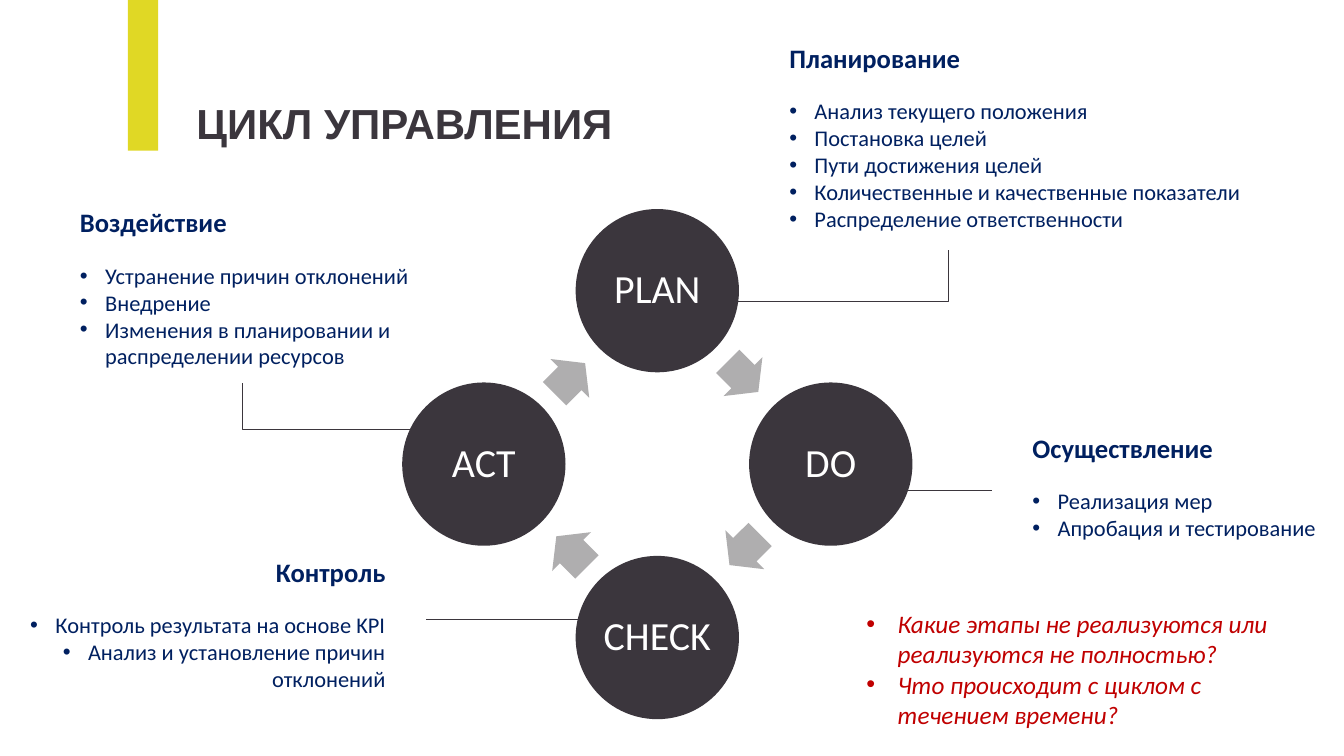
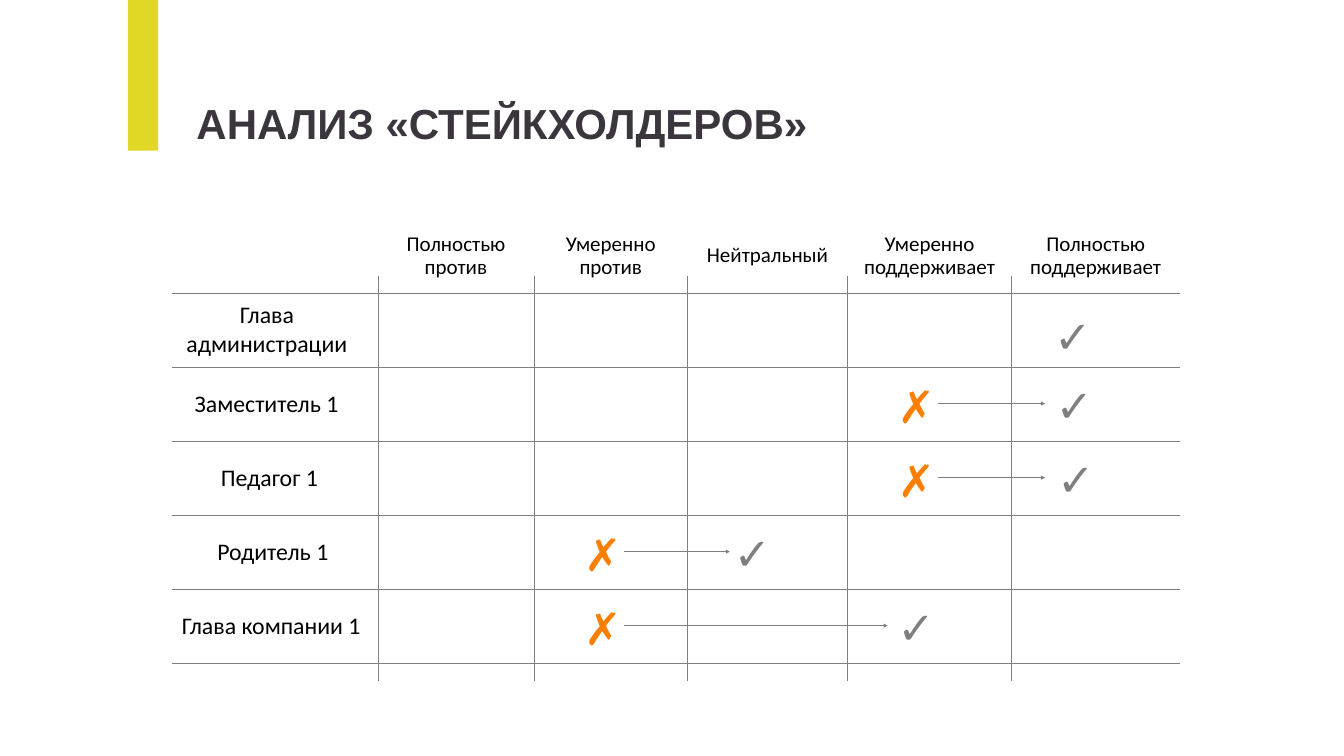
from dataclasses import dataclass
from itertools import pairwise
from math import cos, radians, sin

from lxml import etree
from pptx import Presentation
from pptx.dml.color import RGBColor
from pptx.enum.shapes import MSO_CONNECTOR, MSO_SHAPE
from pptx.enum.text import MSO_ANCHOR, MSO_AUTO_SIZE, PP_ALIGN
from pptx.oxml.ns import qn
from pptx.util import Cm, Pt

LEFT, MID, RIGHT = PP_ALIGN.LEFT, PP_ALIGN.CENTER, PP_ALIGN.RIGHT
TOP, CENTER = MSO_ANCHOR.TOP, MSO_ANCHOR.MIDDLE
GROW, FIXED = MSO_AUTO_SIZE.SHAPE_TO_FIT_TEXT, MSO_AUTO_SIZE.NONE
RECT, OVAL, ARROW = MSO_SHAPE.RECTANGLE, MSO_SHAPE.OVAL, MSO_SHAPE.RIGHT_ARROW
STRAIGHT, ELBOW = MSO_CONNECTOR.STRAIGHT, MSO_CONNECTOR.ELBOW


@dataclass(frozen=True)
class Theme:
    dark: str = "3B363D"
    lime: str = "E0D825"
    navy: str = "002060"
    red: str = "C00000"
    silver: str = "AFAEAF"
    gray: str = "7F7F7F"
    orange: str = "FE7F00"
    white: str = "FFFFFF"
    black: str = "000000"
    head: str = "Arial"
    body: str = "Calibri"
    title: int = 60
    stage: int = 57
    topic: int = 38
    item: int = 32
    ask: int = 36
    column: int = 30
    row: int = 34
    mark: int = 64


T = Theme()

# Cycle slide: box is left, top, width, height in cm
CYCLE = "ЦИКЛ УПРАВЛЕНИЯ"
STAGES = ["PLAN", "DO", "CHECK", "ACT"]
TOPICS = [
    ("Планирование", (39.52, 1.98, 24.49, 9.91), LEFT,
     ["Анализ текущего положения", "Постановка целей",
      "Пути достижения целей",
      "Количественные и качественные показатели",
      "Распределение ответственности"]),
    ("Осуществление", (51.77, 21.62, 15.9, 5.82), LEFT,
     ["Реализация мер", "Апробация и тестирование"]),
    ("Контроль", (0.53, 27.86, 19.15, 7.19), RIGHT,
     ["Контроль результата на основе KPI",
      "Анализ и установление причин отклонений"]),
    ("Воздействие", (3.78, 10.26, 19.33, 8.56), LEFT,
     ["Устранение причин отклонений", "Внедрение",
      "Изменения в планировании и распределении ресурсов"]),
]
ASKS = ["Какие этапы не реализуются или реализуются не полностью?",
        "Что происходит с циклом с течением времени?"]
ASK_BOX = (43.41, 30.53, 21.29, 6.4)
LINKS = [
    (ELBOW, (22.07, 21.62), (12.19, 19.28)),
    (ELBOW, (37.06, 15.16), (47.8, 12.62)),
    (STRAIGHT, (44.55, 24.69), (49.96, 24.69)),
    (STRAIGHT, (29.69, 31.19), (21.49, 31.19)),
]
HUB, ORBIT, DISC = (33.12, 23.39), 8.74, 8.23
TURN, ARROW_W, ARROW_H = 6.17, 2.18, 2.77

# Stakeholder slide
PEOPLE = "АНАЛИЗ «СТЕЙКХОЛДЕРОВ»"
COLUMNS = [("Полностью против", 6.07), ("Умеренно против", 5.89),
           ("Нейтральный", 7.11), ("Умеренно поддерживает", 8.36),
           ("Полностью поддерживает", 8.03)]
ROWS = [("Глава администрации", 7.8, 11.3, 2.87, MID),
        ("Заместитель 1", 9.3, 9.42, 2.62, LEFT),
        ("Педагог 1", 10.62, 8.23, 1.98, LEFT),
        ("Родитель 1", 10.44, 7.11, 2.26, LEFT),
        ("Глава компании 1", 8.66, 11.99, 2.03, LEFT)]
# row, column now, column wanted, left of tick and arrow tip in its column
MOVES = [(1, 3, 4, 1.7, 1.68), (2, 3, 4, 1.78, 1.68),
         (3, 1, 2, 1.8, 2.13), (4, 1, 3, 2.01, 2.03)]
EDGES = [19.05, 26.9, 34.65, 42.7, 50.98]
GRID_L, GRID_R, GRID_T, STEP = 8.66, 59.44, 14.76, 3.73
POST_T, POST_B = 13.92, 34.34


def rgb(code):
    return RGBColor.from_string(code)


def place(shape, box):
    shape.left, shape.top, shape.width, shape.height = map(Cm, box)
    return shape


def setup(frame, anchor=TOP, fit=FIXED, wrap=True, pad=(0.25, 0.13)):
    frame.word_wrap, frame.auto_size = wrap, fit
    frame.vertical_anchor = anchor
    frame.margin_left = frame.margin_right = Cm(pad[0])
    frame.margin_top = frame.margin_bottom = Cm(pad[1])
    return frame


def write(frame, text, size, color, align=LEFT, font=T.body, bold=False,
          italic=False, space=1.0, after=0, hang=0):
    """Add a paragraph of one run; hang is the bullet indent in cm."""
    para = frame.paragraphs[0]
    if para.runs:
        para = frame.add_paragraph()
    para.alignment, para.line_spacing = align, space
    para.space_before, para.space_after = Pt(0), Pt(after)
    props = para._p.get_or_add_pPr()
    props.set("marL", str(Cm(hang)))
    props.set("indent", str(-Cm(hang)))
    if hang:
        etree.SubElement(props, qn("a:buFont"), typeface="Arial")
        etree.SubElement(props, qn("a:buChar"), char="•")
    else:
        etree.SubElement(props, qn("a:buNone"))
    run = para.add_run()
    run.text = text
    run.font.name, run.font.size = font, Pt(size)
    run.font.bold, run.font.italic = bold, italic
    run.font.color.rgb = rgb(color)


def label(slide, box, text, size, color, pad=(0.51, 0.25), **style):
    shape = slide.shapes.add_textbox(*map(Cm, box))
    write(setup(shape.text_frame, pad=pad), text, size, color, **style)


def solid(slide, kind, box, color):
    shape = slide.shapes.add_shape(kind, *map(Cm, box))
    shape.shadow.inherit = False
    shape.fill.solid()
    shape.fill.fore_color.rgb = rgb(color)
    shape.line.fill.background()
    return shape


def rule(slide, start, end, color, width, kind=STRAIGHT, tip=False):
    line = slide.shapes.add_connector(kind, *map(Cm, (*start, *end)))
    line.line.color.rgb = rgb(color)
    line.line.width = Pt(width)
    props = line._element.spPr
    if tip:
        etree.SubElement(props.find(qn("a:ln")), qn("a:tailEnd"),
                         type="triangle")
    if kind == ELBOW:  # put the corner under the end point
        guides = props.find(qn("a:prstGeom")).find(qn("a:avLst"))
        etree.SubElement(guides, qn("a:gd"), name="adj1", fmla="val 100000")
    etree.SubElement(props, qn("a:effectLst"))


def start(deck, layout, title, width):
    """Add a slide with the shared title and accent band."""
    slide = deck.slides.add_slide(deck.slide_layouts.get_by_name(layout))
    head = place(slide.shapes.title, (9.65, 4.78, width, 2.82))
    write(setup(head.text_frame, fit=GROW, wrap=False), title, T.title,
          T.dark, font=T.head, bold=True)
    solid(slide, RECT, (6.45, 0, 1.52, 7.59), T.lime)
    return slide


def spot(dist, angle, wide, high):
    """Box centred on a circle round the hub."""
    turn = radians(angle)
    return (HUB[0] + dist * cos(turn) - wide / 2,
            HUB[1] + dist * sin(turn) - high / 2, wide, high)


def cycle(deck):
    slide = start(deck, "Comparison", CYCLE, 21.69)
    for i, name in enumerate(STAGES):
        disc = solid(slide, OVAL, spot(ORBIT, 90 * i - 90, DISC, DISC), T.dark)
        frame = setup(disc.text_frame, CENTER, wrap=False, pad=(0.2, 0.2))
        write(frame, name, T.stage, T.white, MID, space=0.9)
        arrow = solid(slide, ARROW,
                      spot(TURN, 90 * i - 45.6, ARROW_W, ARROW_H), T.silver)
        arrow.adjustments[0], arrow.adjustments[1] = 0.6, 0.5
        arrow.rotation = 45 + 90 * i
    for kind, begin, end in LINKS:
        rule(slide, begin, end, T.dark, 0.5, kind)
    bodies = [p for p in slide.placeholders
              if 1 <= p.placeholder_format.idx <= 4]
    for body, (topic, box, align, items) in zip(bodies, TOPICS):
        frame = setup(place(body, box).text_frame, fit=GROW)
        write(frame, topic, T.topic, T.navy, align, bold=True, after=34)
        for item in items:
            write(frame, item, T.item, T.navy, align, hang=1.27)
    box = slide.shapes.add_textbox(*map(Cm, ASK_BOX))
    frame = setup(box.text_frame, fit=GROW)
    for ask in ASKS:
        write(frame, ask, T.ask, T.red, italic=True, hang=1.57)


def people(deck):
    slide = start(deck, "Title Only", PEOPLE, 31.45)
    tops = [GRID_T + STEP * i for i in range(len(ROWS) + 1)]
    for y in tops:
        rule(slide, (GRID_L, y), (GRID_R, y), T.gray, 1)
    for x in EDGES:
        rule(slide, (x, POST_T), (x, POST_B), T.gray, 1)

    for (name, wide), (a, b) in zip(COLUMNS, pairwise(EDGES + [GRID_R])):
        y = 11.62 if " " in name else 12.17
        label(slide, ((a + b - wide) / 2, y, wide, 3.48), name, T.column,
              T.black, pad=(0.36, 0.15), align=MID, space=0.9)
    for (name, x, wide, high, align), y in zip(ROWS, tops):
        drop = 0.1 if align == MID else 0.83
        label(slide, (x, y + drop, wide, high), name, T.row, T.black,
              align=align)

    def tick(x, y):
        label(slide, (x, y, 2.79, 3.23), "✓", T.mark, T.gray, bold=True)

    tick(EDGES[4] + 1.63, tops[0] + 0.56)
    for row, now, goal, shift, tip in MOVES:
        y = tops[row]
        label(slide, (EDGES[now] + 2.02, y + 0.33, 2.46, 3.23), "✗",
              T.mark, T.orange)
        tick(EDGES[goal] + shift, y + 0.3)
        rule(slide, (EDGES[now] + 4.55, y + 1.85),
             (EDGES[goal] + tip, y + 1.85), T.gray, 0.75, tip=True)


def main():
    deck = Presentation()
    deck.slide_width, deck.slide_height = Cm(67.72), Cm(38.1)
    cycle(deck)
    people(deck)
    deck.save("out.pptx")


if __name__ == "__main__":
    main()
